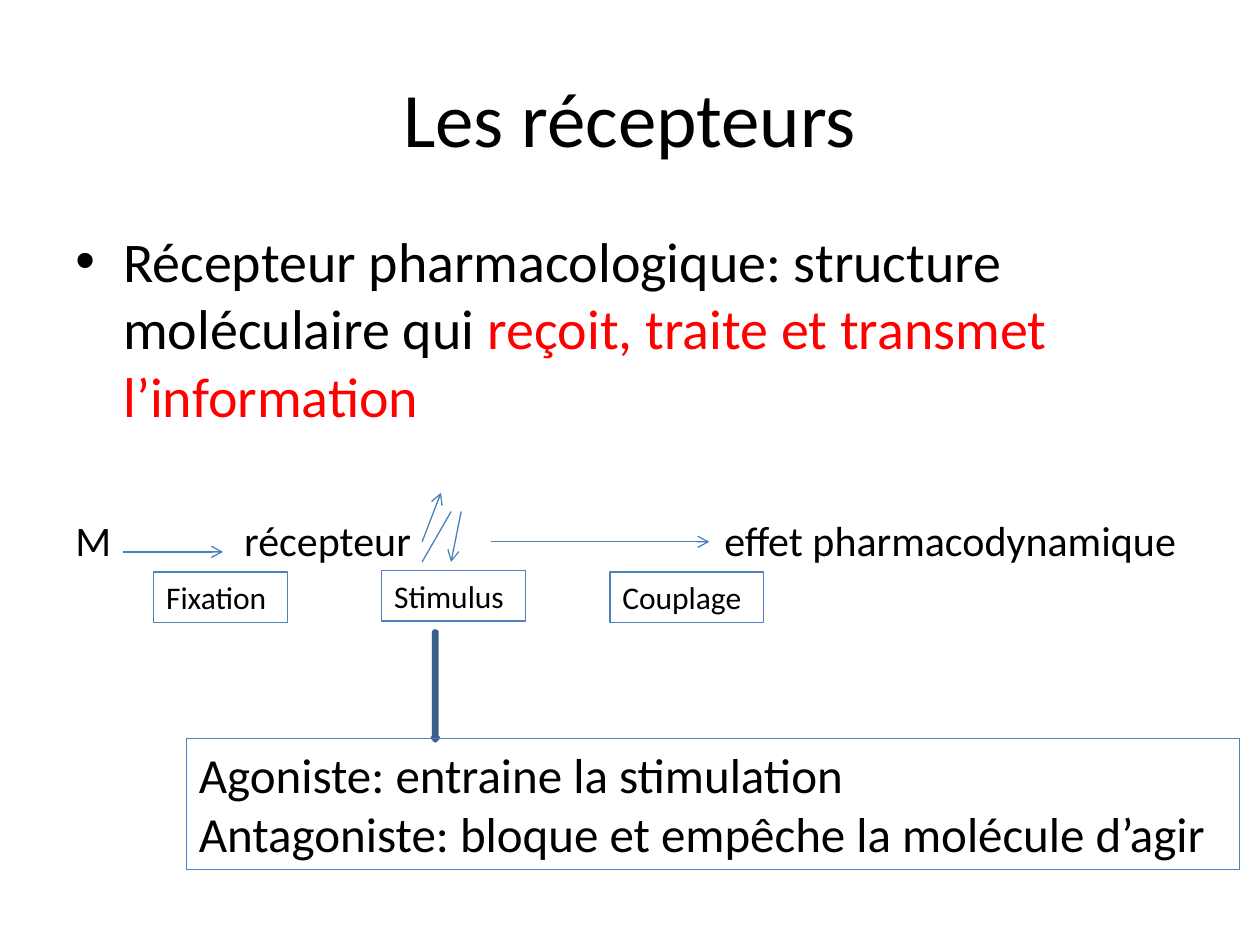
from lxml import etree
from pptx import Presentation
from pptx.dml.color import RGBColor
from pptx.enum.shapes import MSO_CONNECTOR, MSO_SHAPE
from pptx.enum.text import MSO_ANCHOR, PP_ALIGN
from pptx.oxml.ns import qn
from pptx.util import Inches, Pt

STRAIGHT = MSO_CONNECTOR.STRAIGHT
RECTANGLE, DOWN_ARROW = MSO_SHAPE.RECTANGLE, MSO_SHAPE.DOWN_ARROW
MIDDLE, CENTER, LEFT = MSO_ANCHOR.MIDDLE, PP_ALIGN.CENTER, PP_ALIGN.LEFT
BLACK = RGBColor(0x00, 0x00, 0x00)
RED = RGBColor(0xFF, 0x00, 0x00)
BLUE = RGBColor(0x4F, 0x81, 0xBD)
LINE_BLUE = RGBColor(0x4B, 0x7E, 0xBC)
DARK_BLUE = RGBColor(0x3A, 0x5F, 0x8C)

deck = Presentation()
deck.slide_width, deck.slide_height = Inches(10), Inches(7.5)
page = deck.slides.add_slide(deck.slide_layouts[6])
COLUMN, ROW = deck.slide_width / 100, deck.slide_height / 75


def grid(*cells):
    return [int(cell * (ROW if place % 2 else COLUMN)) for place, cell in enumerate(cells)]


def style(para, size, color=BLACK):
    for span in para.runs:
        span.font.name = "Calibri"
        span.font.size = Pt(size)
        span.font.color.rgb = color


title = page.shapes.add_textbox(*grid(5, 3, 90, 12.5)).text_frame
title.word_wrap = True
title.vertical_anchor = MIDDLE
title.text = "Les récepteurs"
title.paragraphs[0].alignment = CENTER
style(title.paragraphs[0], 44)

body = page.shapes.add_textbox(*grid(5, 17.5, 90, 49.5)).text_frame
body.word_wrap = True
body.text = "Récepteur pharmacologique: structure moléculaire qui "
definition = body.paragraphs[0]
definition.add_run().text = "reçoit, traite et transmet l’information"
style(definition, 32)
definition.runs[1].font.color.rgb = RED
properties = definition._p.get_or_add_pPr()
properties.set("marL", str(Inches(0.38)))
properties.set("indent", str(Inches(-0.38)))
etree.SubElement(properties, qn("a:buFont")).set("typeface", "Arial")
etree.SubElement(properties, qn("a:buChar")).set("char", "•")

pathway = body.add_paragraph()
pathway.text = "M\trécepteur\teffet pharmacodynamique"
pathway.space_before = Pt(49)
style(pathway, 24)
tabs = etree.SubElement(pathway._p.get_or_add_pPr(), qn("a:tabLst"))
for stop in (13.4, 51.5):
    etree.SubElement(tabs, qn("a:tab"), pos=str(int(stop * COLUMN)), algn="l")

for ends, has_head in (
    ((9.8, 43.8, 17.7, 43.8), True),
    ((33.5, 43, 35, 39.1), True),
    ((36.6, 40.6, 35.8, 44.6), True),
    ((35.8, 40.6, 33.5, 44.6), False),
    ((39, 43, 56.3, 43), True),
):
    connector = page.shapes.add_connector(STRAIGHT, *grid(*ends))
    connector.line.color.rgb = LINE_BLUE
    connector.line.width = Pt(0.75)
    if has_head:
        etree.SubElement(connector.line._get_or_add_ln(), qn("a:tailEnd")).set("type", "arrow")
    etree.SubElement(connector._element.spPr, qn("a:effectLst"))

arrow = page.shapes.add_shape(DOWN_ARROW, *grid(34.3, 50.1, 0.5, 8.7))
arrow.shadow.inherit = False
arrow.fill.solid()
arrow.fill.fore_color.rgb = BLUE
arrow.line.color.rgb = DARK_BLUE
arrow.line.width = Pt(2)

for cells, size, text in (
    ((12.2, 45.4, 10.6, 4), 18, "Fixation"),
    ((30.3, 45.3, 11.4, 4), 18, "Stimulus"),
    ((48.4, 45.4, 12.2, 4), 18, "Couplage"),
    ((14.8, 58.6, 83.6, 10.4), 28,
     "Agoniste: entraine la stimulation\nAntagoniste: bloque et empêche la molécule d’agir"),
):
    box = page.shapes.add_shape(RECTANGLE, *grid(*cells))
    box.shadow.inherit = False
    box.fill.background()
    box.line.color.rgb = BLUE
    box.line.width = Pt(0.75)
    box.text_frame.word_wrap = True
    box.text_frame.text = text
    for para in box.text_frame.paragraphs:
        para.alignment = LEFT
        style(para, size)

deck.save("out.pptx")
